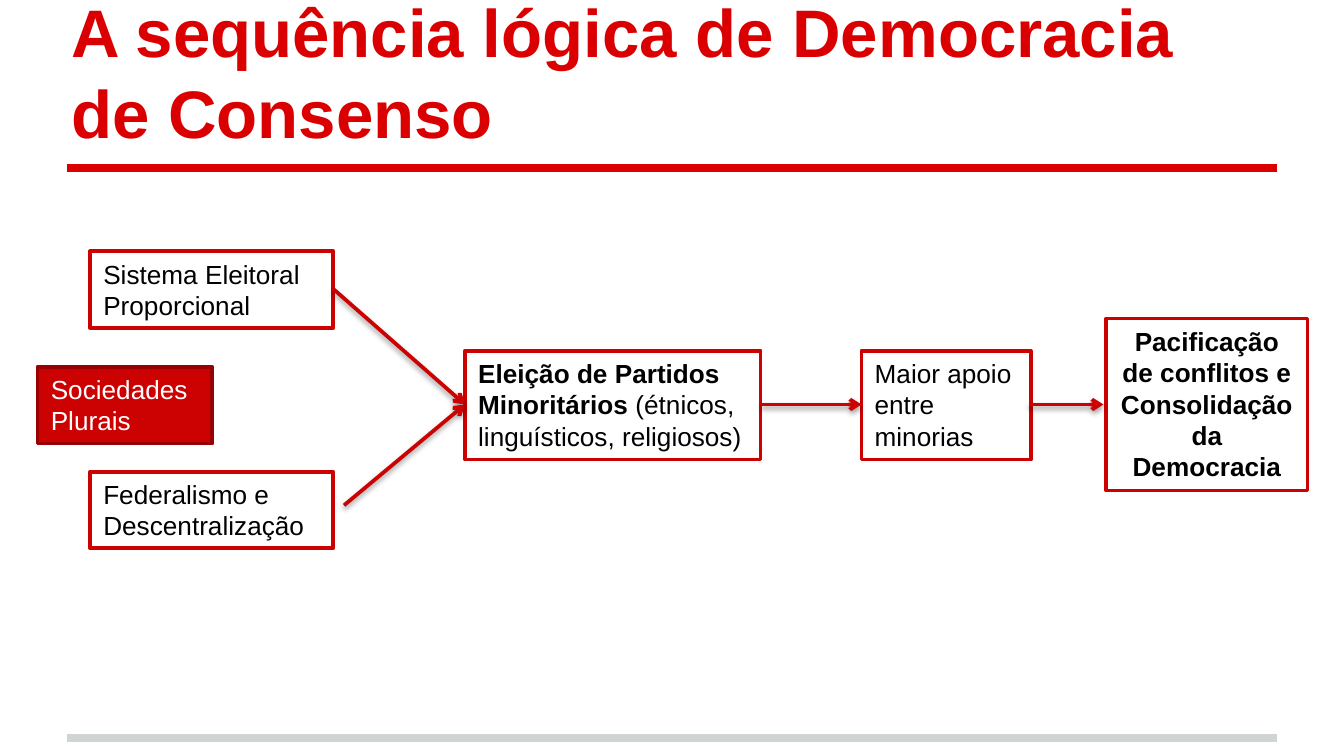
import pptx
import pptx.util
import pptx.dml.color
import pptx.enum.shapes
import pptx.enum.text
import pptx.oxml
import pptx.oxml.ns

Inches, Pt = pptx.util.Inches, pptx.util.Pt
RGBColor = pptx.dml.color.RGBColor
Align, Anchor = pptx.enum.text.PP_ALIGN, pptx.enum.text.MSO_ANCHOR
AutoSize = pptx.enum.text.MSO_AUTO_SIZE

TITLE_RED = RGBColor(0xDA, 0x00, 0x02)
RED = RGBColor(0xCC, 0x02, 0x02)
DARK_RED = RGBColor(0x97, 0x01, 0x01)
GRAY = RGBColor(0xCF, 0xD4, 0xD4)
BLACK = RGBColor(0x00, 0x00, 0x00)
WHITE = RGBColor(0xFF, 0xFF, 0xFF)

NS = pptx.oxml.ns.nsdecls("a")
NO_EFFECT = f"<a:effectLst {NS}/>"
SOFT_SHADOW = (
    f'<a:effectLst {NS}><a:outerShdw blurRad="{Pt(3.1)}" dist="{Pt(1.6)}" '
    'dir="5400000" rotWithShape="0"><a:srgbClr val="000000">'
    '<a:alpha val="38000"/></a:srgbClr></a:outerShdw></a:effectLst>'
)

# Widescreen slide, 16:9
prs = pptx.Presentation()
prs.slide_width, prs.slide_height = Inches(10), Inches(10 * 9 / 16)
slide = prs.slides.add_slide(prs.slide_layouts[5])


def add_line(start, end, color, width, effect):
    line = slide.shapes.add_connector(
        pptx.enum.shapes.MSO_CONNECTOR.STRAIGHT,
        *(Inches(value) for value in (*start, *end)))
    line.line.color.rgb = color
    line.line.width = Pt(width)
    line._element.spPr.append(pptx.oxml.parse_xml(effect))
    return line


# Rules above and below the content
for y, color in ((5.49, GRAY), (1.25, TITLE_RED)):
    add_line((0.5, y), (9.5, y), color, 4, NO_EFFECT)

# Title
title = slide.shapes.title
title.left, title.top = Inches(0.43), Inches(0.29)
title.width, title.height = Inches(9), Inches(0.94)
frame = title.text_frame
frame.auto_size = AutoSize.NONE
frame.word_wrap = True
frame.vertical_anchor = Anchor.BOTTOM
frame.margin_left = frame.margin_right = Inches(0.1)
frame.margin_top = frame.margin_bottom = Inches(0.1)
heading = frame.paragraphs[0]
heading.text = "A sequência lógica de Democracia de Consenso"
heading.alignment = Align.LEFT
heading.line_spacing = 1.0
heading.font.name = "Arial"
heading.font.size = Pt(36)
heading.font.bold = True
heading.font.color.rgb = TITLE_RED

# Boxes: position, bold text, regular text, alignment, fill, outline, text colour
plain = (WHITE, RED, BLACK)
boxes = [
    ((0.67, 1.87, 1.81, 0.57), "", "Sistema Eleitoral Proporcional", Align.LEFT, *plain),
    ((3.46, 2.61, 2.2, 0.81), "Eleição de Partidos Minoritários ",
     "(étnicos, linguísticos, religiosos)", Align.LEFT, *plain),
    ((6.41, 2.61, 1.26, 0.81), "", "Maior apoio entre minorias", Align.LEFT, *plain),
    ((8.23, 2.37, 1.5, 1.28), "Pacificação de conflitos e Consolidação da Democracia",
     "", Align.CENTER, *plain),
    ((0.67, 3.51, 1.81, 0.57), "", "Federalismo e Descentralização", Align.LEFT, *plain),
    ((0.28, 2.73, 1.3, 0.57), "", "Sociedades Plurais", Align.LEFT, RED, DARK_RED, WHITE),
]
for position, bold_text, regular_text, alignment, fill, outline, text_color in boxes:
    box = slide.shapes.add_shape(
        pptx.enum.shapes.MSO_SHAPE.RECTANGLE, *(Inches(value) for value in position))
    box.shadow.inherit = False
    box.fill.solid()
    box.fill.fore_color.rgb = fill
    box.line.color.rgb = outline
    box.line.width = Pt(2)
    frame = box.text_frame
    frame.word_wrap = True
    frame.auto_size = AutoSize.SHAPE_TO_FIT_TEXT
    frame.vertical_anchor = Anchor.TOP
    label = frame.paragraphs[0]
    label.alignment = alignment
    label.font.name = "Arial"
    label.font.size = Pt(14)
    label.font.color.rgb = text_color
    for text, bold in ((bold_text, True), (regular_text, False)):
        if text:
            run = label.add_run()
            run.text = text
            run.font.bold = bold

# Arrows between the steps
arrows = [
    ((2.48, 2.15), (3.46, 3.01)),
    ((2.56, 3.76), (3.46, 3.01)),
    ((5.66, 3.01), (6.41, 3.01)),
    ((7.66, 3.01), (8.21, 3.01)),
]
for start, end in arrows:
    arrow = add_line(start, end, RED, 2, SOFT_SHADOW)
    arrow.line._get_or_add_ln().append(
        pptx.oxml.parse_xml(f'<a:tailEnd {NS} type="arrow"/>'))

prs.save("out.pptx")
